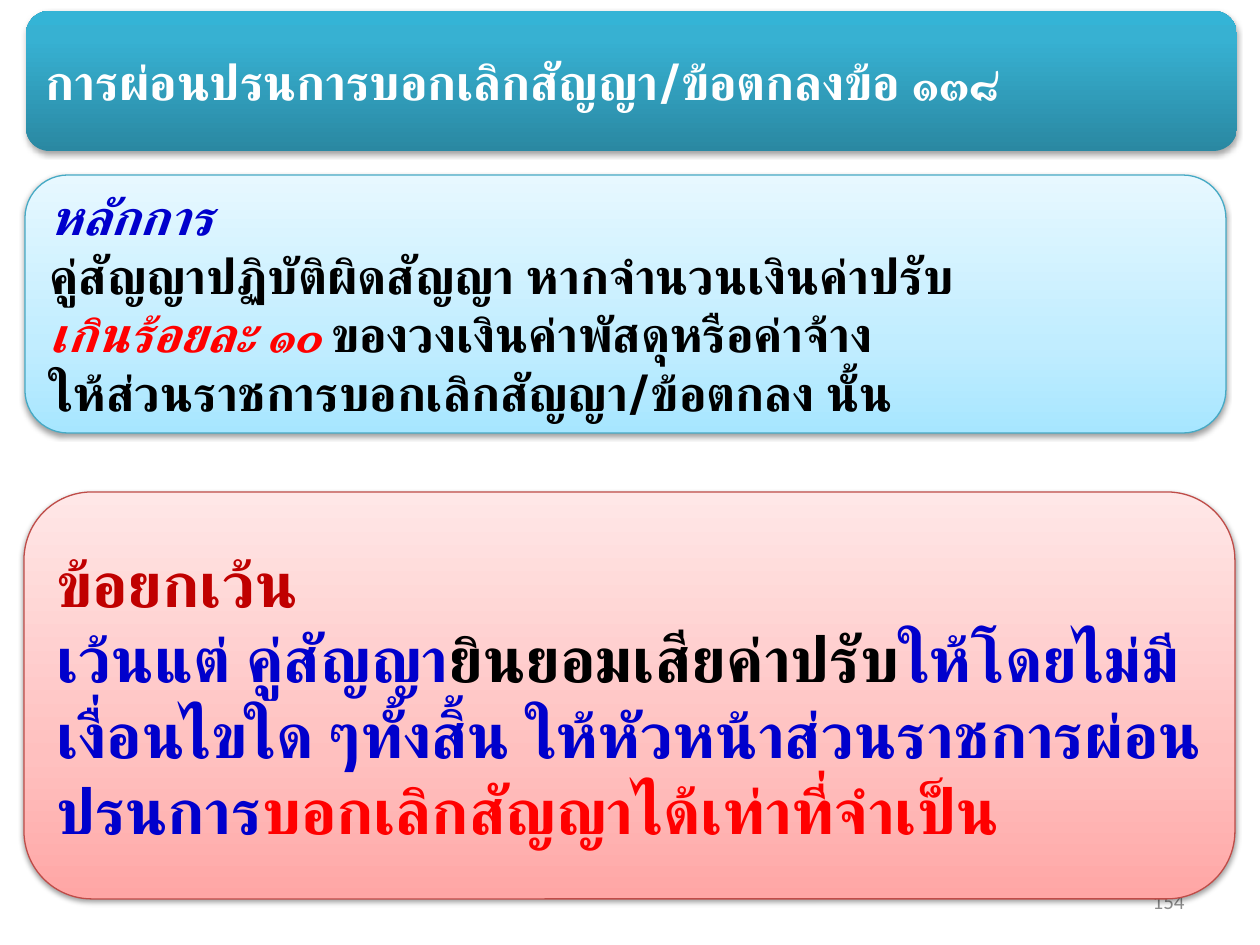
from lxml.etree import SubElement
from pptx import Presentation
from pptx.dml.color import RGBColor
from pptx.enum.shapes import MSO_SHAPE as Shape
from pptx.enum.text import MSO_ANCHOR as Anchor, MSO_AUTO_SIZE as AutoSize, PP_ALIGN as Align
from pptx.oxml import parse_xml
from pptx.oxml.ns import nsdecls, qn
from pptx.util import Emu, Pt

PX = 914400 // 126
WHITE = RGBColor(0xFF, 0xFF, 0xFF)
BLACK = RGBColor(0x00, 0x00, 0x00)
GREY = RGBColor(0x8C, 0x8C, 0x8C)
BLUE = RGBColor(0x00, 0x00, 0xCC)
RED = RGBColor(0xFF, 0x00, 0x00)
DARK_RED = RGBColor(0xC0, 0x00, 0x00)
CYAN_LINE = RGBColor(0x46, 0xAA, 0xC5)
ROSE_LINE = RGBColor(0xBF, 0x4C, 0x48)

# Gradient stops run from the bottom edge to the top edge.
TEAL_STOPS = [(0, RGBColor(0x2A, 0x88, 0xA2)), (80, RGBColor(0x37, 0xB1, 0xD2)),
              (100, RGBColor(0x34, 0xB4, 0xD6))]
SKY_STOPS = [(0, RGBColor(0xA7, 0xE6, 0xFF)), (35, RGBColor(0xC1, 0xED, 0xFF)),
             (100, RGBColor(0xE7, 0xF8, 0xFF))]
ROSE_STOPS = [(0, RGBColor(0xFF, 0xA6, 0xA5)), (35, RGBColor(0xFF, 0xC0, 0xBF)),
              (100, RGBColor(0xFF, 0xE7, 0xE7))]

TITLE = "การผ่อนปรนการบอกเลิกสัญญา/ข้อตกลงข้อ ๑๓๘"
TITLE_AREA = (26, 11, 1211, 140)
NUMBER = "154"
NUMBER_AREA = (903, 876, 294, 50)

# Each paragraph is a list of (text, colour, italic).
PANELS = [
    {"area": (25, 175, 1201, 258), "stops": SKY_STOPS, "line": CYAN_LINE, "size": 28,
     "paras": [
         [("หลักการ", BLUE, True)],
         [("คู่สัญญาปฏิบัติผิดสัญญา หากจำนวนเงินค่าปรับ", BLACK, False)],
         [("เกินร้อยละ ๑๐ ", RED, True), ("ของวงเงินค่าพัสดุหรือค่าจ้าง", BLACK, False)],
         [("ให้ส่วนราชการบอกเลิกสัญญา/ข้อตกลง นั้น", BLACK, False)],
     ]},
    {"area": (24, 492, 1211, 407), "stops": ROSE_STOPS, "line": ROSE_LINE, "size": 36,
     "paras": [
         [("ข้อยกเว้น", DARK_RED, False)],
         [("เว้นแต่ คู่สัญญา", BLUE, False),
          ("ยินยอมเสียค่าปรับ", BLACK, False),
          ("ให้โดยไม่มีเงื่อนไขใด ๆทั้งสิ้น ให้หัวหน้าส่วนราชการผ่อนปรนการ", BLUE, False),
          ("บอกเลิกสัญญาได้เท่าที่จำเป็น", RED, False)],
     ]},
]


def to_emu(area):
    return [Emu(length * PX) for length in area]


def add_span(para, text, *, size, color, font="Karla", bold=True, italic=False):
    span = para.add_run()
    span.text = text
    span.font.name = font
    span.font.size = Pt(size)
    span.font.bold = bold
    span.font.italic = italic
    span.font.color.rgb = color
    # Thai letters take the complex-script typeface.
    SubElement(span.font._element, qn("a:cs"), typeface=font)


def set_frame(frame, align):
    frame.word_wrap = True
    frame.auto_size = AutoSize.NONE
    frame.vertical_anchor = Anchor.MIDDLE
    frame.paragraphs[0].alignment = align


def add_card(page, area, stops, *, line=None, shadow_distance, shadow_alpha):
    """Add a rounded card with a vertical gradient and a soft shadow below it."""
    card = page.shapes.add_shape(Shape.FLOWCHART_ALTERNATE_PROCESS, *to_emu(area))
    if line is None:
        card.line.fill.background()
    else:
        card.line.color.rgb = line
        card.line.width = Pt(0.75)
    stop_xml = "".join(f'<a:gs pos="{pos * 1000}"><a:srgbClr val="{color}"/></a:gs>'
                       for pos, color in stops)
    properties = card.element.spPr
    properties.find(qn("a:prstGeom")).addnext(parse_xml(
        f'<a:gradFill {nsdecls("a")} rotWithShape="1"><a:gsLst>{stop_xml}</a:gsLst>'
        '<a:lin ang="16200000" scaled="0"/></a:gradFill>'))
    properties.append(parse_xml(
        f'<a:effectLst {nsdecls("a")}><a:outerShdw blurRad="{Pt(3.1)}" '
        f'dist="{Pt(shadow_distance)}" dir="5400000" rotWithShape="0">'
        f'<a:srgbClr val="000000"><a:alpha val="{shadow_alpha * 1000}"/></a:srgbClr>'
        '</a:outerShdw></a:effectLst>'))
    return card


def add_title(page):
    banner = add_card(page, TITLE_AREA, TEAL_STOPS, shadow_distance=1.8, shadow_alpha=35)
    title = page.shapes.title
    title.element.addprevious(banner.element)
    title.left, title.top, title.width, title.height = to_emu(TITLE_AREA)
    frame = title.text_frame
    set_frame(frame, Align.LEFT)
    frame.margin_left = frame.margin_right = Emu(20 * PX)
    add_span(frame.paragraphs[0], TITLE, size=28, color=WHITE)


def add_number(page):
    box = page.shapes.add_textbox(*to_emu(NUMBER_AREA))
    set_frame(box.text_frame, Align.RIGHT)
    add_span(box.text_frame.paragraphs[0], NUMBER, size=12, color=GREY,
             font="Calibri", bold=False)


def add_panel(page, panel):
    card = add_card(page, panel["area"], panel["stops"], line=panel["line"],
                    shadow_distance=1.6, shadow_alpha=38)
    frame = card.text_frame
    set_frame(frame, Align.LEFT)
    for index, spans in enumerate(panel["paras"]):
        para = frame.add_paragraph() if index else frame.paragraphs[0]
        para.alignment = Align.LEFT
        for text, color, italic in spans:
            add_span(para, text, size=panel["size"], color=color, italic=italic)


def main():
    deck = Presentation()
    deck.slide_width, deck.slide_height = to_emu((1260, 945))
    page = deck.slides.add_slide(deck.slide_layouts[5])
    add_title(page)
    add_number(page)
    for panel in PANELS:
        add_panel(page, panel)
    deck.save("out.pptx")


if __name__ == "__main__":
    main()
